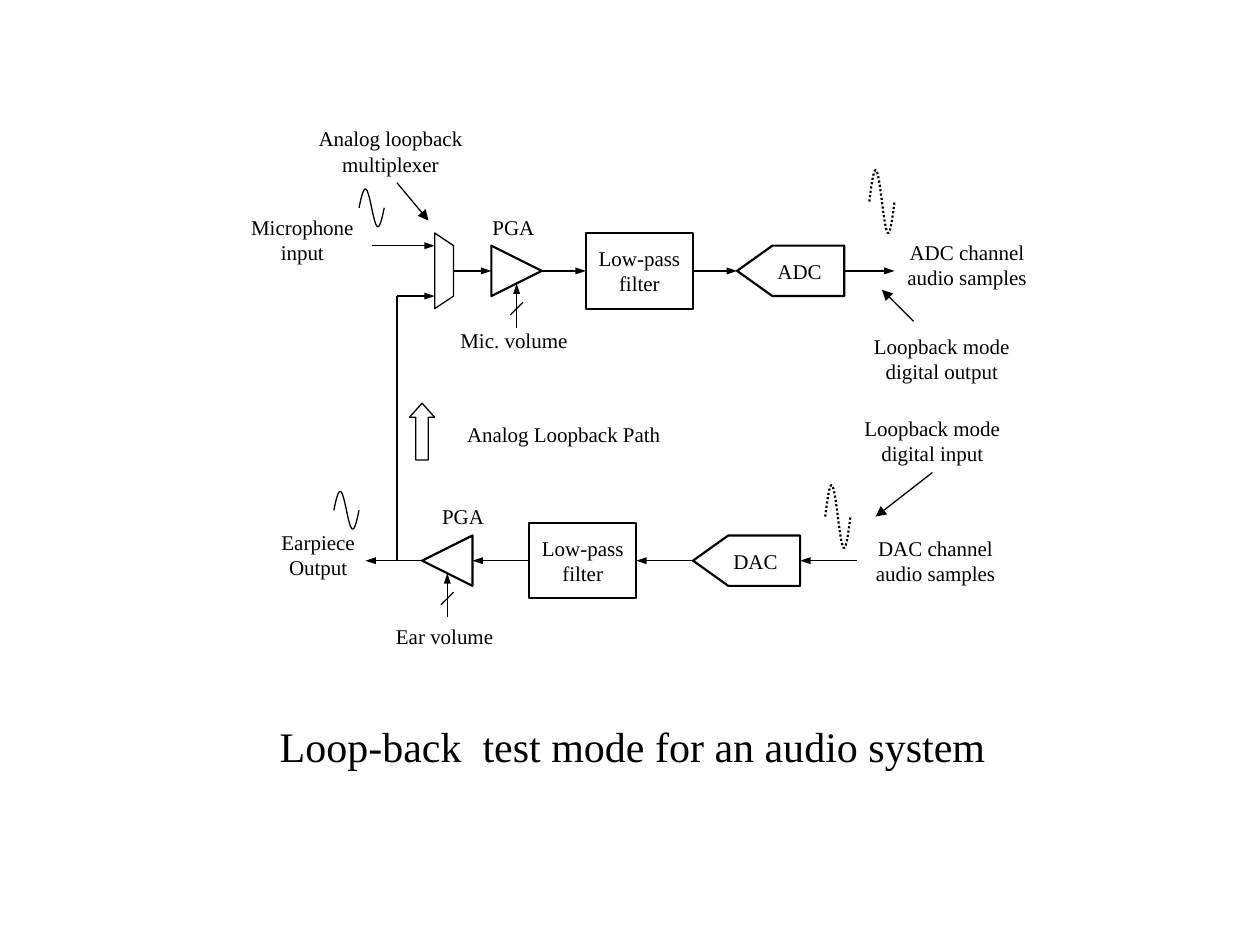
from math import pi, sin
from lxml.etree import SubElement
from pptx import Presentation
from pptx.dml.color import RGBColor
from pptx.enum.dml import MSO_LINE as Dash
from pptx.enum.shapes import MSO_CONNECTOR as Conn, MSO_SHAPE as Kind
from pptx.enum.text import MSO_ANCHOR as Anchor, MSO_AUTO_SIZE as Fit, PP_ALIGN as Align
from pptx.oxml.ns import qn
from pptx.util import Inches, Pt

INK = {"line": "000000", "fill": "FFFFFF"}
FONT = "Times New Roman"
CELL = Inches(0.05)  # grid of 200 columns by 150 rows
THIN, BOLD = 0.75, 1.25

TITLE = "Loop-back  test mode for an audio system"
# text: column, row, columns wide, rows high
LABELS = [
    ("Analog loopback\nmultiplexer", 45, 19, 34, 11),
    ("Microphone\ninput", 34, 33, 28, 11),
    ("PGA", 72, 33, 19, 6),
    ("Mic. volume ", 70, 51, 24, 7),
    ("ADC channel\naudio samples", 138, 37, 31, 12),
    ("Loopback mode\ndigital output", 133, 52, 33, 11),
    ("Analog Loopback Path", 66, 66, 47, 7),
    ("Loopback mode\ndigital input", 133, 65, 30, 11),
    ("PGA", 64, 79, 19, 6),
    ("Earpiece\nOutput", 40, 83, 21, 11),
    ("DAC channel\naudio samples", 133, 84, 31, 12),
    ("Ear volume ", 59, 98, 24, 7),
]
TOP, BOTTOM = 43, 89  # rows of the two signal paths
FILTERS = [(93, TOP), (84, BOTTOM)]
TAGS = [("ADC", 117, TOP), ("DAC", 110, BOTTOM)]
AMPS = [(78, 86, TOP), (75, 67, BOTTOM)]  # base column, tip column, row
MUX = [(69, 37), (72, 39), (72, 47), (69, 49)]
# column, middle row, rows of swing, dotted
WAVES = [(57, 33, 3, False), (53, 81, 3, False), (138, 32, 5, True), (131, 82, 5, True)]
# from column and row, to column and row, joins as (end, filter, side)
FLOWS = [
    (59, 39, 69, 39, None), (63, 47, 69, 47, None),
    (72, TOP, 78, TOP, None), (86, TOP, 93, TOP, ("to", 0, 1)),
    (110, TOP, 117, TOP, ("from", 0, 3)), (134, TOP, 142, TOP, None),
    (136, BOTTOM, 127, BOTTOM, None), (110, BOTTOM, 101, BOTTOM, ("to", 1, 3)),
    (84, BOTTOM, 75, BOTTOM, ("from", 1, 1)), (67, BOTTOM, 58, BOTTOM, None),
    (82, 52, 82, 45, None), (71, 98, 71, 91, None),
]
POINTERS = [(63, 29, 68, 35), (145, 51, 140, 46), (148, 75, 139, 82)]
PLAIN = [(63, 47, 63, BOTTOM), (83, 48, 81, 50), (72, 94, 70, 96)]

deck = Presentation()
deck.slide_width, deck.slide_height = 200 * CELL, 150 * CELL
slide = deck.slides.add_slide(deck.slide_layouts[5])
shapes = slide.shapes


def grid(*cells):
    return [round(c * CELL) for c in cells]


def write(shape, text, size=12, align=Align.CENTER, anchor=Anchor.TOP, wrap=True, inset=0.1):
    frame = shape.text_frame
    frame.auto_size, frame.word_wrap = Fit.NONE, wrap
    frame.vertical_anchor = anchor
    frame.margin_left = Inches(inset)
    frame.text = text
    for para in frame.paragraphs:
        para.alignment = align
        font = para.runs[0].font
        font.name, font.size = FONT, Pt(size)
        font.color.rgb = RGBColor.from_string(INK["line"])


def ink(shape, width, fill=False):
    """Set outline and fill of a shape."""
    shape.shadow.inherit = False
    shape.line.width = Pt(width)
    shape.line.color.rgb = RGBColor.from_string(INK["line"])
    if fill:
        shape.fill.solid()
        shape.fill.fore_color.rgb = RGBColor.from_string(INK["fill"])
    else:
        shape.fill.background()
    return shape


def outline(points, width, close=True, fill=False):
    first, *rest = [grid(*p) for p in points]
    path = shapes.build_freeform(*first, scale=1.0)
    path.add_line_segments(rest, close=close)
    return ink(path.convert_to_shape(), width, fill)


def wire(ends, head=None):
    """Draw a thin line; head is the width of its arrowhead."""
    line = shapes.add_connector(Conn.STRAIGHT, *grid(*ends))
    line.line.width = Pt(THIN)
    line.line.color.rgb = RGBColor.from_string(INK["line"])
    if head:
        SubElement(line.line._get_or_add_ln(), qn("a:tailEnd"), type="triangle", w=head, len="med")
    SubElement(line._element.spPr, qn("a:effectLst"))
    return line


filters = []
for col, row in FILTERS:
    box = ink(shapes.add_shape(Kind.RECTANGLE, *grid(col, row - 6, 17, 12)), BOLD)
    write(box, "Low-pass\nfilter", anchor=Anchor.MIDDLE, inset=0.1)
    filters.append(box)

for name, col, row in TAGS:
    tag = outline([(col + 5.6, row - 4), (col + 17, row - 4), (col + 17, row + 4),
                   (col + 5.6, row + 4), (col, row)], BOLD, fill=True)
    write(tag, name, anchor=Anchor.MIDDLE, inset=0.24)

for base, tip, row in AMPS:
    outline([(base, row - 4), (tip, row), (base, row + 4)], BOLD)
outline(MUX, THIN)

for col, row, swing, dotted in WAVES:
    curve = [(col + i / 8, row - swing * sin(pi * i / 16)) for i in range(33)]
    wave = outline(curve, BOLD if dotted else THIN, close=False)
    if dotted:
        wave.line.dash_style = Dash.ROUND_DOT

for *ends, join in FLOWS:
    flow = wire(ends, "sm")
    if join:
        end, which, side = join
        hook = flow.begin_connect if end == "from" else flow.end_connect
        hook(filters[which], side)
for ends in POINTERS:
    wire(ends, "med")
for ends in PLAIN:
    wire(ends)

arrow = ink(shapes.add_shape(Kind.UP_ARROW, *grid(65, 64, 4, 9)), THIN, fill=True)
arrow.adjustments[0], arrow.adjustments[1] = 0.5, 0.56

for text, *place in LABELS:
    write(shapes.add_textbox(*grid(*place)), text)

title = shapes.title
title.left, title.top, title.width, title.height = grid(42.4, 113.4, 117, 10.2)
write(title, TITLE, size=24, align=Align.LEFT, wrap=False)

deck.save("out.pptx")
